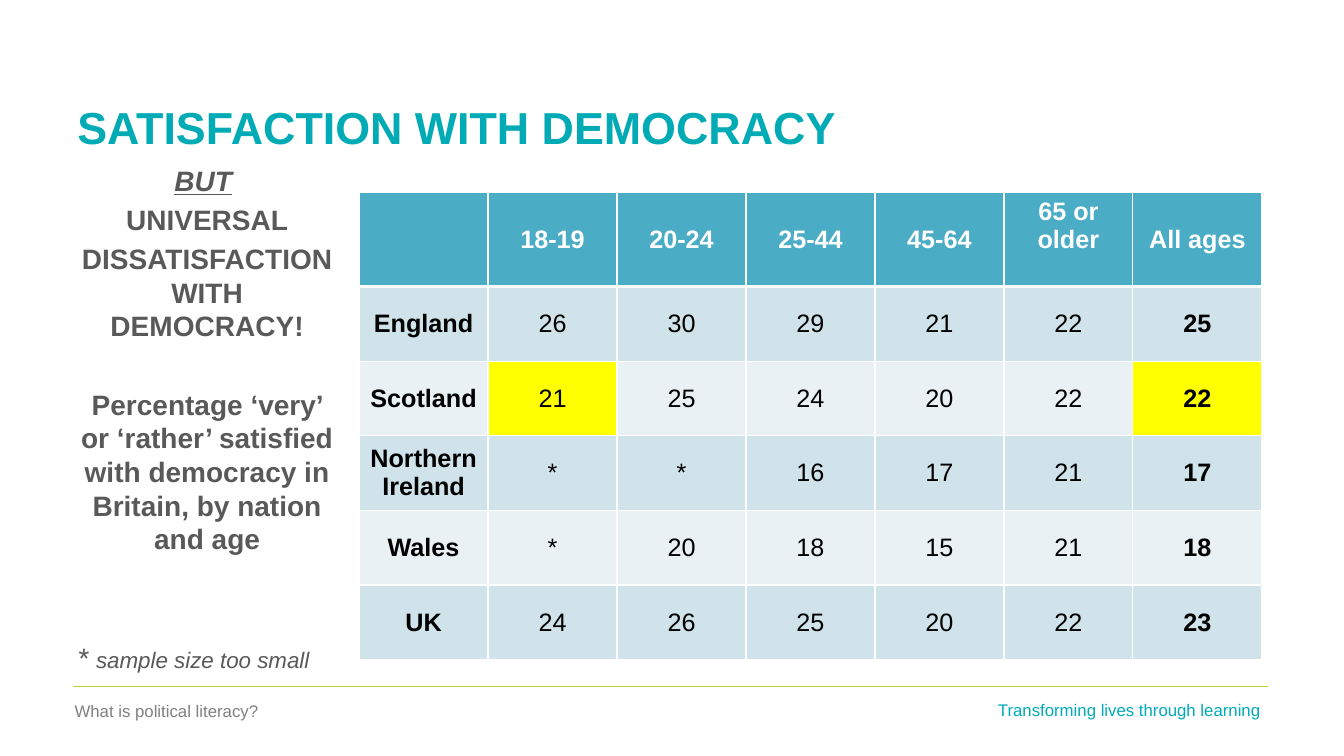
from dataclasses import dataclass

from lxml.etree import SubElement
from pptx import Presentation
from pptx.dml.color import RGBColor
from pptx.enum.shapes import MSO_CONNECTOR
from pptx.enum.text import MSO_ANCHOR, PP_ALIGN
from pptx.oxml.ns import qn
from pptx.slide import Slide
from pptx.table import _Cell
from pptx.text.text import Font
from pptx.util import Cm, Pt

COLORS = {
    "teal": "00ABB5", "lime": "B3D236", "grey": "808080", "body": "595959",
    "header": "4BACC6", "band": "D0E3EA", "pale": "E9F1F5",
    "highlight": "FFFF00", "white": "FFFFFF", "black": "000000",
}
FONT = "Arial"


@dataclass
class Label:
    text: str
    left: float
    top: float
    width: float
    height: float
    size: float
    color: str
    bold: bool = False
    anchor: MSO_ANCHOR = MSO_ANCHOR.TOP


@dataclass
class BodyLine:
    runs: list[str]
    before: float
    align: PP_ALIGN = PP_ALIGN.CENTER


LABELS = [
    Label("SATISFACTION WITH DEMOCRACY", 1.7, 0.76, 21.06, 3.23, 32, "teal",
          True, MSO_ANCHOR.BOTTOM),
    Label("What is political literacy?", 1.63, 17.53, 7.65, 0.76, 12, "grey"),
    Label("Transforming lives through learning", 24.9, 17.5, 7.65, 0.76, 12, "teal"),
]
BODY = [
    BodyLine(["BUT", " "], 0),
    BodyLine(["UNIVERSAL"], 4),
    BodyLine(["DISSATISFACTION WITH DEMOCRACY!"], 4),
    BodyLine(["Percentage ‘very’ or ‘rather’ satisfied with democracy in "
              "Britain, by nation and age"], 32),
    BodyLine(["* ", "sample size too small"], 61, PP_ALIGN.LEFT),
]
ROWS = [
    ["", "18-19", "20-24", "25-44", "45-64", "65 or older", "All ages"],
    ["England", "26", "30", "29", "21", "22", "25"],
    ["Scotland", "21", "25", "24", "20", "22", "22"],
    ["Northern\nIreland", "*", "*", "16", "17", "21", "17"],
    ["Wales", "*", "20", "18", "15", "21", "18"],
    ["UK", "24", "26", "25", "20", "22", "23"],
]
HIGHLIGHTED = {(2, 1), (2, 6)}
TOP_ALIGNED = (0, 5)


def rgb(name: str) -> RGBColor:
    return RGBColor.from_string(COLORS[name])


def style(font: Font, size: float, color: str, bold: bool) -> None:
    font.name, font.size, font.bold = FONT, Pt(size), bold
    font.color.rgb = rgb(color)


def add_label(s: Slide, label: Label) -> None:
    sp = s.shapes.add_textbox(Cm(label.left), Cm(label.top),
                              Cm(label.width), Cm(label.height))
    tf = sp.text_frame
    tf.text = label.text
    tf.word_wrap = True
    tf.vertical_anchor = label.anchor
    style(tf.paragraphs[0].runs[0].font, label.size, label.color, label.bold)


def add_body(s: Slide) -> None:
    tf = s.shapes.add_textbox(Cm(1.7), Cm(3.99), Cm(7.04), Cm(13.03)).text_frame
    tf.word_wrap = True
    for i, line in enumerate(BODY):
        p = tf.add_paragraph() if i else tf.paragraphs[0]
        p.alignment = line.align
        p.space_before = Pt(line.before)
        for text in line.runs:
            r = p.add_run()
            r.text = text
            style(r.font, 20, "body", True)
    but = tf.paragraphs[0].runs[0].font
    but.italic = but.underline = True
    footnote = tf.paragraphs[-1].runs
    for r in footnote:
        r.font.bold, r.font.italic = False, True
    footnote[1].font.size = Pt(16)


def set_borders(cell: _Cell, row: int) -> None:
    """White 1 pt borders, with a 3 pt line between header and data."""
    heavy = {0: "lnB", 1: "lnT"}.get(row)
    tc_pr = cell._tc.get_or_add_tcPr()
    for side in ("lnL", "lnR", "lnT", "lnB"):
        ln = SubElement(tc_pr, qn(f"a:{side}"), w=str(Pt(3 if side == heavy else 1)))
        fill = SubElement(ln, qn("a:solidFill"))
        SubElement(fill, qn("a:srgbClr"), val=COLORS["white"])


def cell_fill(row: int, col: int) -> str:
    if (row, col) in HIGHLIGHTED:
        return "highlight"
    if row == 0:
        return "header"
    return "band" if row % 2 else "pale"


def add_scores(s: Slide) -> None:
    n_rows, n_cols = len(ROWS), len(ROWS[0])
    table = s.shapes.add_table(n_rows, n_cols, Cm(9.05), Cm(4.86),
                               Cm(3.25 * n_cols), Cm(11.76)).table
    for column in table.columns:
        column.width = Cm(3.25)
    for i, values in enumerate(ROWS):
        table.rows[i].height = Cm(1.88 if i else 2.36)
        for j, value in enumerate(values):
            cell = table.cell(i, j)
            set_borders(cell, i)
            cell.fill.solid()
            cell.fill.fore_color.rgb = rgb(cell_fill(i, j))
            cell.vertical_anchor = (MSO_ANCHOR.TOP if (i, j) == TOP_ALIGNED
                                    else MSO_ANCHOR.MIDDLE)
            cell.text_frame.text = value
            for p in cell.text_frame.paragraphs:
                p.alignment = PP_ALIGN.CENTER
                for r in p.runs:
                    style(r.font, 18, "black" if i else "white",
                          i == 0 or j in (0, n_cols - 1))


def add_rule(s: Slide) -> None:
    line = s.shapes.add_connector(MSO_CONNECTOR.STRAIGHT, Cm(1.85), Cm(17.3),
                                  Cm(31.95), Cm(17.3))
    line.line.color.rgb = rgb("lime")
    line.line.width = Pt(0.75)
    SubElement(line._element.spPr, qn("a:effectLst"))


def main() -> None:
    prs = Presentation()
    prs.slide_width, prs.slide_height = Cm(33.87), Cm(19.05)
    s = prs.slides.add_slide(prs.slide_layouts[6])
    add_rule(s)
    for label in LABELS:
        add_label(s, label)
    add_scores(s)
    add_body(s)
    prs.save("out.pptx")


if __name__ == "__main__":
    main()
